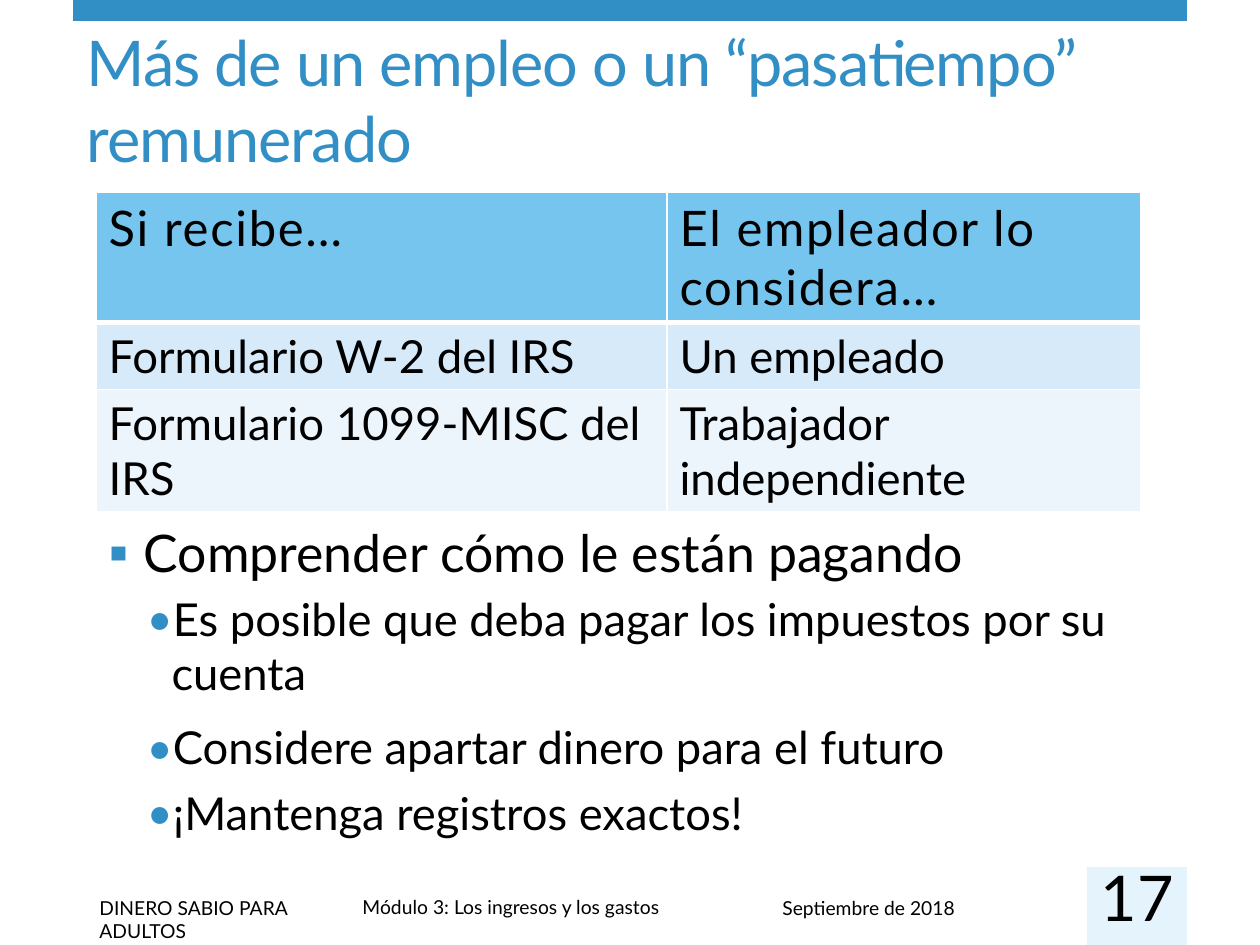
from lxml import etree
from pptx import Presentation
from pptx.dml.color import RGBColor
from pptx.enum.shapes import MSO_SHAPE
from pptx.enum.text import MSO_ANCHOR, MSO_AUTO_SIZE, PP_ALIGN
from pptx.oxml.ns import qn
from pptx.util import Emu, Pt

RECTANGLE = MSO_SHAPE.RECTANGLE
LEFT, CENTER = PP_ALIGN.LEFT, PP_ALIGN.CENTER
BOTTOM, MIDDLE = MSO_ANCHOR.BOTTOM, MSO_ANCHOR.MIDDLE
NO_AUTOSIZE = MSO_AUTO_SIZE.NONE

BLUE = RGBColor(0x31, 0x8F, 0xC5)
HEADER_BLUE = RGBColor(0x76, 0xC5, 0xEF)
ROW_BLUE = RGBColor(0xD6, 0xEA, 0xF9)
ROW_PALE = RGBColor(0xEC, 0xF5, 0xFC)
NUMBER_BLUE = RGBColor(0xE4, 0xF3, 0xFC)
WHITE = RGBColor(0xFF, 0xFF, 0xFF)
BLACK = RGBColor(0, 0, 0)
FONT = "Lato"
PX = 914400 / 126


def px(*lengths):
    return [Emu(round(length * PX)) for length in lengths]


def style(para, size, color=BLACK, align=LEFT):
    para.alignment = align
    para.font.name = FONT
    para.font.size = Pt(size)
    para.font.bold = False
    para.font.color.rgb = color


deck = Presentation()
deck.slide_width, deck.slide_height = px(1260, 945)
page = deck.slides.add_slide(deck.slide_layouts[1])

for area, color in [((73, 0, 1114, 21), BLUE), ((1087, 867, 100, 78), NUMBER_BLUE)]:
    block = page.shapes.add_shape(RECTANGLE, *px(*area))
    block.shadow.inherit = False
    block.fill.solid()
    block.fill.fore_color.rgb = color
    block.line.fill.background()

footers = [
    ("DINERO SABIO PARA ADULTOS", (87, 890, 263, 36)),
    ("Módulo\u00a03: Los ingresos y los gastos", (350, 889, 713, 36)),
    ("Septiembre de 2018", (770, 890, 317, 36)),
]
for text, area in footers:
    box = page.shapes.add_textbox(*px(*area))
    box.text_frame.word_wrap = True
    box.text_frame.text = text
    style(box.text_frame.paragraphs[0], 11)

title = page.shapes.title
title.left, title.top, title.width, title.height = px(74, 60, 1033, 121)
title.text_frame.auto_size = NO_AUTOSIZE
title.text_frame.vertical_anchor = BOTTOM
title.text_frame.text = "Más de un empleo o un “pasatiempo” remunerado"
para = title.text_frame.paragraphs[0]
style(para, 36, BLUE)
para.runs[0].font._element.set("spc", "-60")

rows = [
    (("Si recibe…", "El empleador lo considera…"), 129, 28, 100, HEADER_BLUE),
    (("Formulario\u00a0W-2 del IRS", "Un empleado"), 67, 26, 0, ROW_BLUE),
    (("Formulario\u00a01099-MISC del IRS", "Trabajador independiente"), 122, 26, 0, ROW_PALE),
]
table = page.shapes.add_table(3, 2, *px(96, 192, 1045, 318)).table
for column, width in zip(table.columns, px(571, 474)):
    column.width = width
for r, (texts, height, size, spacing, color) in enumerate(rows):
    table.rows[r].height = px(height)[0]
    for c, text in enumerate(texts):
        cell = table.cell(r, c)
        cell.text = text
        para = cell.text_frame.paragraphs[0]
        style(para, size)
        para.runs[0].font._element.set("spc", str(spacing))
        properties = cell._tc.get_or_add_tcPr()
        for side in ("lnL", "lnR", "lnT", "lnB"):
            thick = (r, side) in [(0, "lnB"), (1, "lnT")]
            border = etree.SubElement(properties, qn(f"a:{side}"), w=str(Pt(3 if thick else 1)))
            fill = etree.SubElement(border, qn("a:solidFill"))
            etree.SubElement(fill, qn("a:srgbClr"), val=str(WHITE))
        cell.fill.solid()
        cell.fill.fore_color.rgb = color

body = page.placeholders[1]
body.left, body.top, body.width, body.height = px(96, 514, 1134, 350)
body.text_frame.auto_size = NO_AUTOSIZE
points = [
    ("Comprender cómo le están pagando", 0, 29.6, 1, 0),
    ("Es posible que deba pagar los impuestos por su cuenta", 1, 25.9, 1, 5),
    ("Considere apartar dinero para el futuro", 1, 25.9, 1.2, 5),
    ("¡Mantenga registros exactos!", 1, 25.9, 1.2, 0),
]
levels = [("▪", 35, -35), ("•", 63, -25)]
body.text_frame.text = "\n".join(point[0] for point in points)
for para, (text, level, size, line_spacing, before) in zip(body.text_frame.paragraphs, points):
    mark, margin, indent = levels[level]
    para.level = level
    para.line_spacing = line_spacing
    para.space_before = Pt(before)
    properties = para._p.get_or_add_pPr()
    properties.set("marL", str(px(margin)[0]))
    properties.set("indent", str(px(indent)[0]))
    bullet_color = etree.SubElement(properties, qn("a:buClr"))
    etree.SubElement(bullet_color, qn("a:srgbClr"), val=str(BLUE))
    etree.SubElement(properties, qn("a:buFont"), typeface=FONT)
    etree.SubElement(properties, qn("a:buChar"), char=mark)
    style(para, size)

number = page.shapes.add_textbox(*px(1087, 877, 100, 39))
frame = number.text_frame
frame.margin_left = frame.margin_top = frame.margin_right = frame.margin_bottom = 0
frame.word_wrap = True
frame.vertical_anchor = MIDDLE
frame.text = "17"
style(frame.paragraphs[0], 36, align=CENTER)

deck.save("out.pptx")
